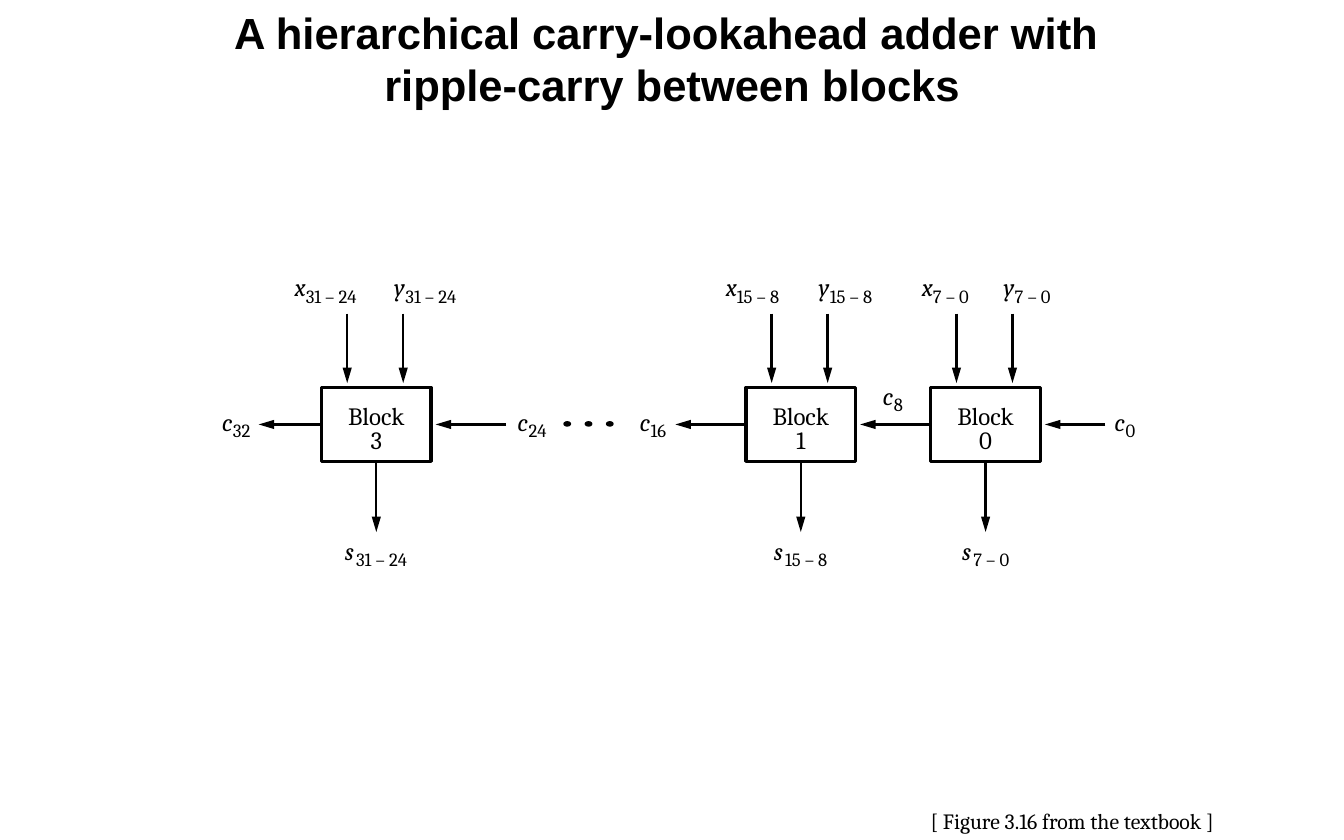
from typing import NamedTuple

from lxml.etree import SubElement
from pptx import Presentation
from pptx.dml.color import RGBColor
from pptx.enum.shapes import MSO_CONNECTOR, MSO_SHAPE
from pptx.enum.text import MSO_ANCHOR, MSO_AUTO_SIZE, PP_ALIGN
from pptx.oxml.ns import qn
from pptx.util import Inches, Pt

INK = "000000"
SERIF = "Cambria"
WIDTH, HEIGHT, TOP = 0.98, 0.66, 3.46
MIDDLE = TOP + HEIGHT / 2
GAP = 0.04


class Block(NamedTuple):
    name: str
    bits: str
    left: float
    x_left: float
    y_left: float
    s_left: float
    out_tip: float


class Label(NamedTuple):
    base: str
    sub: str
    left: float
    top: float


BLOCKS = [
    Block("3", "31 – 24", 2.87, 2.63, 3.52, 3.08, 2.31),
    Block("1", "15 – 8", 6.66, 6.48, 7.31, 6.91, 6.03),
    Block("0", "7 – 0", 8.31, 8.23, 8.96, 8.59, 6.66 + WIDTH + GAP),
]
CARRIES = [
    Label("c", "32", 1.98, 3.63),
    Label("c", "24", 4.62, 3.63),
    Label("c", "16", 5.71, 3.63),
    Label("c", "8", 7.88, 3.4),
    Label("c", "0", 9.95, 3.63),
]


def color(code: str) -> RGBColor:
    return RGBColor.from_string(code)


def style(frame, size: float, face: str = SERIF, bold=False, italic=False) -> None:
    for para in frame.paragraphs:
        for run in para.runs:
            font = run.font
            font.name, font.size = face, Pt(size)
            font.bold, font.italic = bold, italic
            font.color.rgb = color(INK)


def write(slide, text: str, left: float, top: float, wide: float, high: float,
          size: float, inset: float = 0, italic: bool = False) -> None:
    box = slide.shapes.add_textbox(Inches(left), Inches(top), Inches(wide), Inches(high))
    frame = box.text_frame
    frame.text = text
    frame.word_wrap = False
    frame.margin_left = frame.margin_right = Inches(inset)
    frame.margin_top = frame.margin_bottom = Inches(inset / 2)
    style(frame, size, italic=italic)


def draw_label(slide, item: Label) -> None:
    write(slide, item.base, item.left, item.top, 0.12, 0.27, 16, italic=True)
    write(slide, item.sub, item.left + 0.1, item.top + 0.11,
          0.1 * len(item.sub) + 0.05, 0.2, 12)


def draw_arrow(slide, x: float, y: float, tip_x: float, tip_y: float,
               start=None, site: int = 0) -> None:
    line = slide.shapes.add_connector(
        MSO_CONNECTOR.STRAIGHT, Inches(x), Inches(y), Inches(tip_x), Inches(tip_y))
    if start is not None:
        line.begin_connect(start, site)
    line.line.color.rgb = color(INK)
    line.line.width = Pt(1.5)
    props = line.element.spPr
    SubElement(props.find(qn("a:ln")), qn("a:tailEnd"), type="triangle", w="med", len="lg")
    SubElement(props, qn("a:effectLst"))


def draw_block(slide, item: Block) -> None:
    box = slide.shapes.add_shape(
        MSO_SHAPE.RECTANGLE, Inches(item.left), Inches(TOP), Inches(WIDTH), Inches(HEIGHT))
    box.shadow.inherit = False
    box.fill.background()
    box.line.color.rgb = color(INK)
    box.line.width = Pt(2.25)
    frame = box.text_frame
    frame.text = f"Block\n{item.name}"
    frame.vertical_anchor = MSO_ANCHOR.TOP
    frame.margin_left = frame.margin_right = 0
    frame.margin_top, frame.margin_bottom = Inches(0.18), 0
    for para in frame.paragraphs:
        para.alignment = PP_ALIGN.CENTER
        para.line_spacing = Pt(15)
    style(frame, 16)

    for shift in (0.23, 0.73):
        draw_arrow(slide, item.left + shift, 2.8, item.left + shift, TOP - GAP)
    center = item.left + WIDTH / 2
    draw_arrow(slide, center, TOP + HEIGHT, center, 4.75, box, 2)
    draw_arrow(slide, item.left, MIDDLE, item.out_tip, MIDDLE, box, 1)
    draw_label(slide, Label("x", item.bits, item.x_left, 2.43))
    draw_label(slide, Label("y", item.bits, item.y_left, 2.43))
    draw_label(slide, Label("s", item.bits, item.s_left, 4.78))


def draw_dots(slide) -> None:
    for i in range(3):
        dot = slide.shapes.add_shape(
            MSO_SHAPE.OVAL, Inches(5.03 + 0.19 * i), Inches(3.76), Inches(0.07), Inches(0.05))
        dot.shadow.inherit = False
        dot.fill.solid()
        dot.fill.fore_color.rgb = color(INK)
        dot.line.fill.background()


def set_title(slide) -> None:
    title = slide.shapes.title
    title.left, title.top = Inches(1), Inches(0)
    title.width, title.height = Inches(10), Inches(0.75)
    frame = title.text_frame
    frame.text = "A hierarchical carry-lookahead adder with \nripple-carry between blocks"
    frame.auto_size = MSO_AUTO_SIZE.NONE
    frame.vertical_anchor = MSO_ANCHOR.TOP
    for para in frame.paragraphs:
        para.alignment = PP_ALIGN.CENTER
    style(frame, 28, "Arial", bold=True)


def main() -> None:
    deck = Presentation()
    deck.slide_width, deck.slide_height = Inches(12), Inches(7.5)
    slide = deck.slides.add_slide(deck.slide_layouts[5])
    set_title(slide)
    for item in BLOCKS:
        draw_block(slide, item)
    for start, item in ((4.52, BLOCKS[0]), (9.87, BLOCKS[2])):
        draw_arrow(slide, start, MIDDLE, item.left + WIDTH + GAP, MIDDLE)
    for item in CARRIES:
        draw_label(slide, item)
    draw_dots(slide)
    write(slide, "[ Figure 3.16 from the textbook ]", 8.21, 7.16, 2.79, 0.34, 14, inset=0.1)
    deck.save("out.pptx")


if __name__ == "__main__":
    main()
